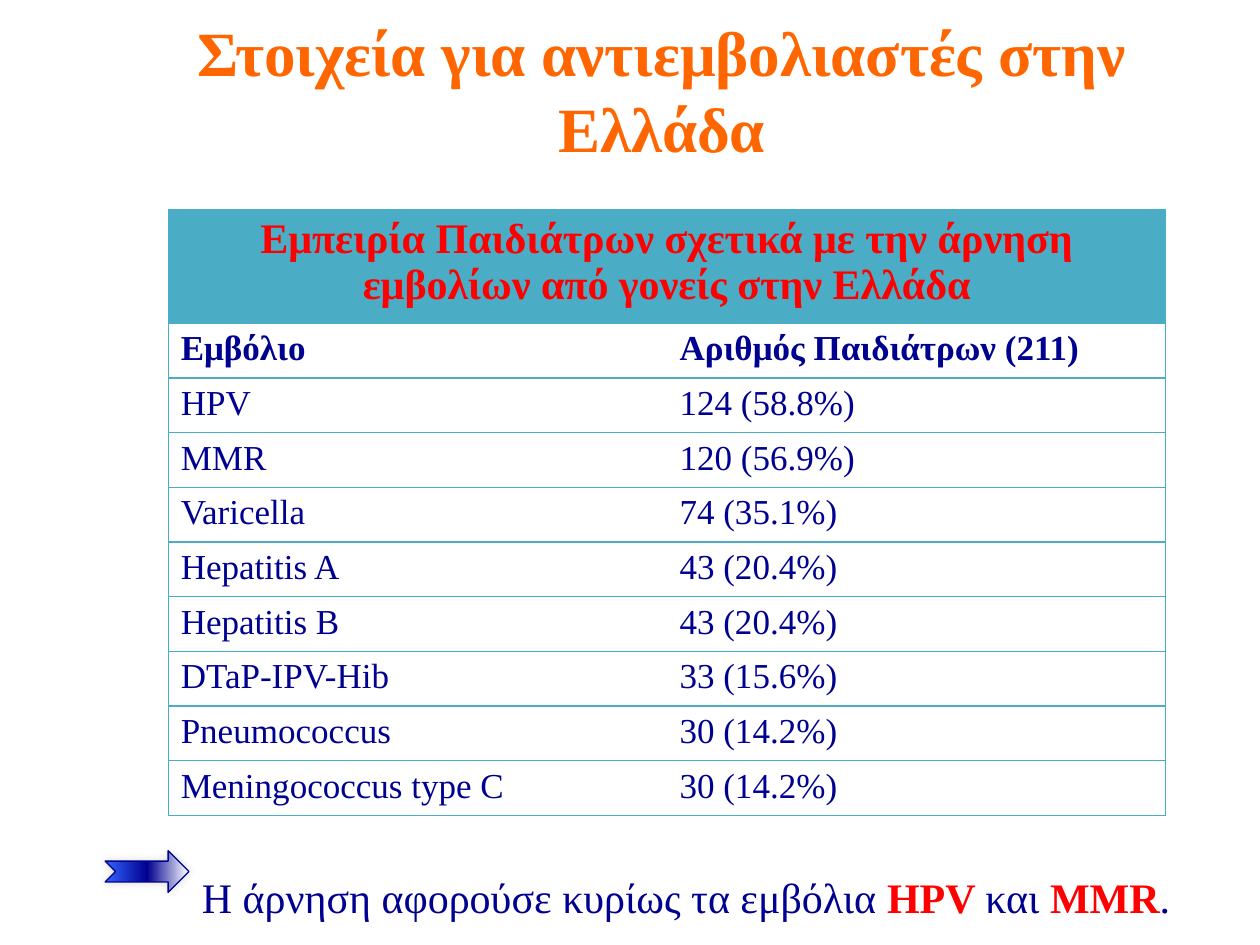
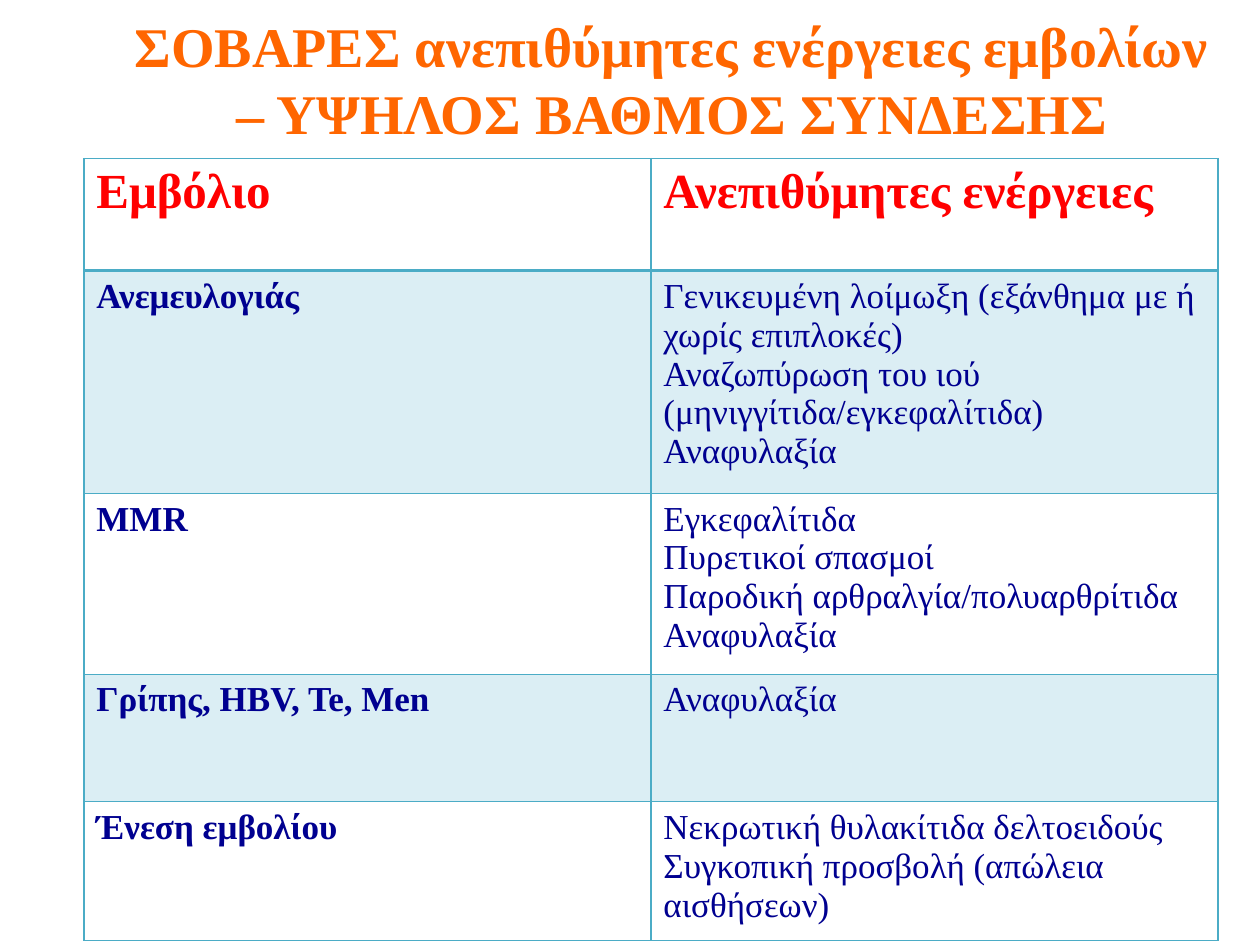
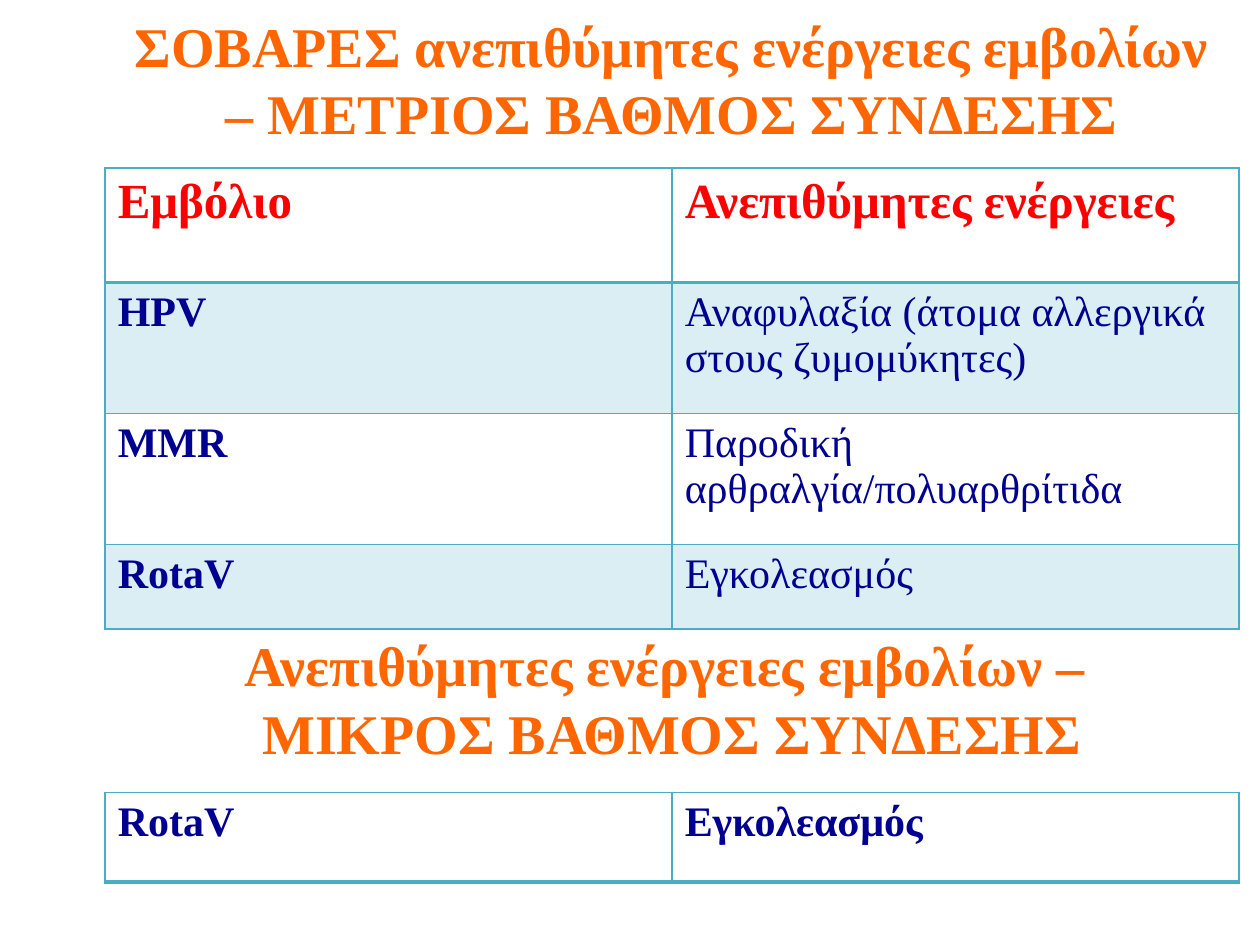
import dataclasses

import lxml.etree
import pptx
import pptx.dml.color
import pptx.enum.shapes
import pptx.enum.text
import pptx.oxml.ns
import pptx.util

Cm = pptx.util.Cm
qn = pptx.oxml.ns.qn


@dataclasses.dataclass(frozen=True)
class Theme:
    font: str = "Times New Roman"
    title: str = "FF6600"
    accent: str = "FF0000"
    body: str = "000090"
    border: str = "4BACC6"
    band: str = "DBEEF4"
    arrow_stops: tuple = ((0, "3366FF"), (50, "000090"), (100, "FFFFFF"))
    large_title_size: float = 36
    title_size: float = 32
    heading_size: float = 28
    large_size: float = 24
    small_size: float = 20
    thin: float = 0.75
    regular: float = 1
    thick: float = 2


THEME = Theme()

REFUSAL_TABLE = {
    "box": (3.39, 4.23, 20.11),
    "row_heights": [2.13] + [1.04] * 9,
    "rows": [
        ("Εμπειρία Παιδιάτρων σχετικά με την άρνηση εμβολίων από γονείς στην Ελλάδα",),
        ("Εμβόλιο", "Αριθμός Παιδιάτρων (211)"),
        ("HPV", "124 (58.8%)"),
        ("MMR", "120 (56.9%)"),
        ("Varicella", "74 (35.1%)"),
        ("Hepatitis A", "43 (20.4%)"),
        ("Hepatitis B", "43 (20.4%)"),
        ("DTaP-IPV-Hib", "33 (15.6%)"),
        ("Pneumococcus", "30 (14.2%)"),
        ("Meningococcus type C", "30 (14.2%)"),
    ],
    "heading_size": THEME.large_size,
    "heading_fill": THEME.border,
    "bold_rows": 2,
    "bold_columns": 0,
    "banded": False,
    "line": THEME.thin,
    "heading_line": THEME.thin,
    "column_lines": False,
}

EFFECT_HEADINGS = ("Εμβόλιο", "Ανεπιθύμητες ενέργειες")

HIGH_TABLE = {
    "box": (1.69, 3.2, 22.86),
    "row_heights": [2.26, 4.37, 3.53, 2.57, 2.72],
    "rows": [
        EFFECT_HEADINGS,
        ("Ανεμευλογιάς",
         "Γενικευμένη λοίμωξη (εξάνθημα με ή χωρίς επιπλοκές)\n"
         "Αναζωπύρωση του ιού (μηνιγγίτιδα/εγκεφαλίτιδα)\n"
         "Αναφυλαξία"),
        ("MMR",
         "Εγκεφαλίτιδα\nΠυρετικοί σπασμοί\n"
         "Παροδική αρθραλγία/πολυαρθρίτιδα\nΑναφυλαξία"),
        ("Γρίπης, ΗΒV, Te, Men", "Αναφυλαξία"),
        ("Ένεση εμβολίου",
         "Νεκρωτική θυλακίτιδα δελτοειδούς\n"
         "Συγκοπική προσβολή (απώλεια αισθήσεων)"),
    ],
}

MEDIUM_TABLE = {
    "box": (2.12, 3.39, 22.86),
    "row_heights": [2.31, 2.64, 2.64, 1.7],
    "rows": [
        EFFECT_HEADINGS,
        ("HPV", "Αναφυλαξία (άτομα αλλεργικά στους ζυμομύκητες)"),
        ("MMR", "Παροδική αρθραλγία/πολυαρθρίτιδα"),
        ("RotaV", "Εγκολεασμός"),
    ],
    "body_size": THEME.large_size,
}

LOW_TABLE = {
    "box": (2.12, 15.98, 22.86),
    "row_heights": [1.8],
    "rows": [("RotaV", "Εγκολεασμός")],
    "body_size": THEME.large_size,
    "heading_rows": 0,
}

TABLE_DEFAULTS = {
    "heading_rows": 1,
    "heading_size": THEME.heading_size,
    "heading_fill": None,
    "body_size": THEME.small_size,
    "bold_rows": 1,
    "bold_columns": 1,
    "banded": True,
    "line": THEME.regular,
    "heading_line": THEME.thick,
    "column_lines": True,
}

TITLE_BOX = (2.12, 0.21, 22.86, 2.75)

SLIDES = [
    {
        "titles": [("Στοιχεία για αντιεμβολιαστές στην Ελλάδα",
                    (2.12, 0.21, 22.44, 3.18), THEME.large_title_size)],
        "tables": [REFUSAL_TABLE],
        "note": [
            ("Η άρνηση αφορούσε κυρίως τα εμβόλια ", False),
            ("HPV ", True),
            ("και ", False),
            ("MMR", True),
            (".", False),
        ],
    },
    {
        "titles": [("ΣΟΒΑΡΕΣ ανεπιθύμητες ενέργειες εμβολίων – ΥΨΗΛΟΣ ΒΑΘΜΟΣ ΣΥΝΔΕΣΗΣ",
                    TITLE_BOX, THEME.title_size)],
        "tables": [HIGH_TABLE],
    },
    {
        "titles": [
            ("ΣΟΒΑΡΕΣ ανεπιθύμητες ενέργειες εμβολίων – ΜΕΤΡΙΟΣ ΒΑΘΜΟΣ ΣΥΝΔΕΣΗΣ",
             TITLE_BOX, THEME.title_size),
            ("Ανεπιθύμητες ενέργειες εμβολίων – \vΜΙΚΡΟΣ ΒΑΘΜΟΣ ΣΥΝΔΕΣΗΣ",
             (2.12, 12.7, 22.86, 2.75), THEME.title_size),
        ],
        "tables": [MEDIUM_TABLE, LOW_TABLE],
    },
]

NOTE_BOX = (3.82, 17.45, 20.8, 1.25)
ARROW_BOX = (2.12, 17.15, 1.69, 0.84)


def rgb(value):
    return pptx.dml.color.RGBColor.from_string(value)


def format_run(run, size, color, bold):
    run.font.name = THEME.font
    run.font.size = pptx.util.Pt(size)
    run.font.color.rgb = rgb(color)
    run.font.bold = bold


def format_text(text_frame, size, color, bold, alignment=None):
    for paragraph in text_frame.paragraphs:
        paragraph.alignment = alignment
        for run in paragraph.runs:
            format_run(run, size, color, bold)


def add_title(slide, text, box, size):
    shape = slide.shapes.add_textbox(*map(Cm, box))
    text_frame = shape.text_frame
    text_frame.word_wrap = True
    text_frame.vertical_anchor = pptx.enum.text.MSO_ANCHOR.MIDDLE
    text_frame.text = text
    format_text(text_frame, size, THEME.title, True, pptx.enum.text.PP_ALIGN.CENTER)


def add_color(parent, color):
    return lxml.etree.SubElement(parent, qn("a:srgbClr"), val=color)


def set_borders(cell, widths):
    properties = cell._tc.get_or_add_tcPr()
    for side, width in zip("LRTB", widths):
        line = lxml.etree.SubElement(
            properties, qn(f"a:ln{side}"), w=str(pptx.util.Pt(width)))
        if width:
            add_color(lxml.etree.SubElement(line, qn("a:solidFill")), THEME.border)
        else:
            lxml.etree.SubElement(line, qn("a:noFill"))


def border_widths(settings, row, column, spanning):
    line, heading_line = settings["line"], settings["heading_line"]
    inner = line if settings["column_lines"] else 0
    return (
        line if column == 0 else inner,
        line if column == 1 or spanning else inner,
        heading_line if row == 1 else line,
        heading_line if row == 0 else line,
    )


def add_table(slide, content):
    settings = {**TABLE_DEFAULTS, **content}
    rows, heights = settings["rows"], settings["row_heights"]
    left, top, width = settings["box"]
    table = slide.shapes.add_table(
        len(rows), 2, Cm(left), Cm(top), Cm(width), Cm(sum(heights))).table
    table.first_row = table.horz_banding = False

    for row, (texts, height) in enumerate(zip(rows, heights)):
        table.rows[row].height = Cm(height)
        spanning = len(texts) == 1
        if spanning:
            table.cell(row, 0).merge(table.cell(row, 1))
        heading = row < settings["heading_rows"]
        fill = settings["heading_fill"] if heading else None
        if settings["banded"] and row % 2:
            fill = THEME.band

        for column in range(2):
            cell = table.cell(row, column)
            set_borders(cell, border_widths(settings, row, column, spanning))
            if fill:
                cell.fill.solid()
                cell.fill.fore_color.rgb = rgb(fill)
            else:
                cell.fill.background()
            if column < len(texts):
                cell.text_frame.text = texts[column]
                format_text(
                    cell.text_frame,
                    settings["heading_size"] if heading else settings["body_size"],
                    THEME.accent if heading else THEME.body,
                    row < settings["bold_rows"] or column < settings["bold_columns"],
                    pptx.enum.text.PP_ALIGN.CENTER if spanning else None,
                )


def add_note(slide, parts):
    text_frame = slide.shapes.add_textbox(*map(Cm, NOTE_BOX)).text_frame
    text_frame.word_wrap = True
    for text, emphasized in parts:
        run = text_frame.paragraphs[0].add_run()
        run.text = text
        format_run(run, THEME.large_size,
                   THEME.accent if emphasized else THEME.body, emphasized)


def add_arrow(slide):
    arrow = slide.shapes.add_shape(
        pptx.enum.shapes.MSO_SHAPE.NOTCHED_RIGHT_ARROW, *map(Cm, ARROW_BOX))
    arrow.line.color.rgb = rgb(THEME.body)
    arrow.line.width = pptx.util.Pt(THEME.thin)
    arrow.fill.gradient()
    arrow.fill.gradient_angle = 0
    properties = arrow._element.spPr
    stops = properties.find(".//" + qn("a:gsLst"))
    for stop in list(stops):
        stops.remove(stop)
    for position, color in THEME.arrow_stops:
        add_color(lxml.etree.SubElement(stops, qn("a:gs"), pos=str(position * 1000)), color)
    arrow.shadow.inherit = False
    shadow = lxml.etree.SubElement(
        properties.find(qn("a:effectLst")), qn("a:outerShdw"),
        blurRad=str(pptx.util.Pt(5)), dist="0", dir="13500000")
    lxml.etree.SubElement(add_color(shadow, "000000"), qn("a:alpha"), val="15000")


def main():
    presentation = pptx.Presentation()
    presentation.slide_width = Cm(25.4)
    presentation.slide_height = Cm(19.05)
    for content in SLIDES:
        slide = presentation.slides.add_slide(presentation.slide_layouts[6])
        for title in content["titles"]:
            add_title(slide, *title)
        for table in content["tables"]:
            add_table(slide, table)
        if "note" in content:
            add_note(slide, content["note"])
            add_arrow(slide)
    presentation.save("out.pptx")


if __name__ == "__main__":
    main()
